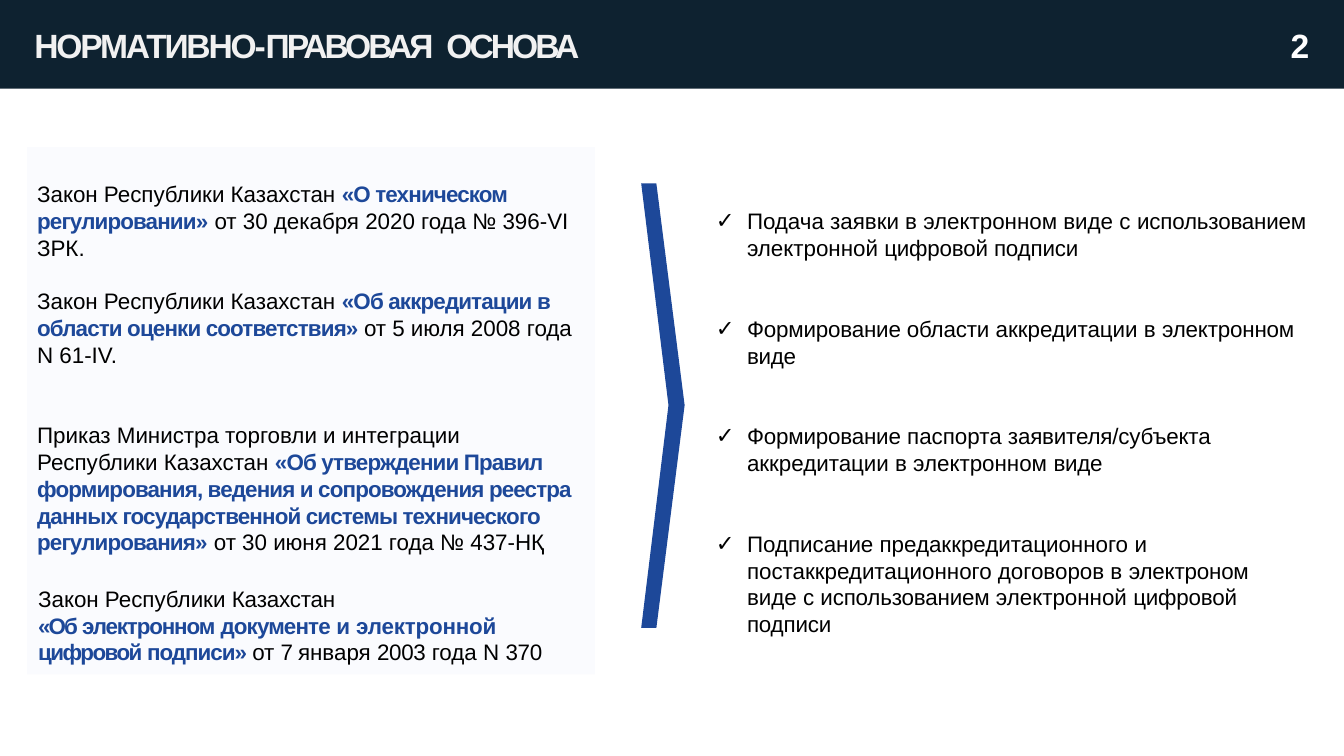
from lxml import etree
from pptx import Presentation
from pptx.dml.color import RGBColor
from pptx.enum.shapes import MSO_SHAPE
from pptx.enum.text import MSO_ANCHOR, MSO_AUTO_SIZE, PP_ALIGN
from pptx.oxml.ns import qn
from pptx.util import Inches, Pt

RECTANGLE = MSO_SHAPE.RECTANGLE
TOP, MIDDLE = MSO_ANCHOR.TOP, MSO_ANCHOR.MIDDLE
FIT_SHAPE = MSO_AUTO_SIZE.SHAPE_TO_FIT_TEXT
LEFT = PP_ALIGN.LEFT

NAVY, BLUE, PALE = "0E2230", "1D4899", "FAFBFE"
BLACK, WHITE, OFF_WHITE = "000000", "FFFFFF", "F1F1F1"
LINE = 19.15  # line pitch of the 16 pt text, in points


def rgb(value):
    return RGBColor.from_string(value)


def law(text, spacing=-0.6):
    """A run that names a law: bold and blue."""
    return text, spacing, BLUE


def para(*runs, **layout):
    return {"runs": runs, **layout}


def write(frame, paragraphs, size=16, color=BLACK, bold=False, line=LINE,
          anchor=TOP, insets=(0, 0.01, 0, 0)):
    """Fill a frame; a run is (text, letter spacing[, accent colour])."""
    frame.word_wrap = True
    frame.auto_size = FIT_SHAPE
    frame.vertical_anchor = anchor
    (frame.margin_left, frame.margin_top,
     frame.margin_right, frame.margin_bottom) = map(Inches, insets)
    for index, item in enumerate(paragraphs):
        p = frame.paragraphs[0] if index == 0 else frame.add_paragraph()
        p.alignment = LEFT
        p.line_spacing = Pt(line) if line else 1.0
        p.space_before = Pt(item.get("before", 0))
        props = p._p.get_or_add_pPr()
        props.set("marL", str(Inches(item.get("margin", 0))))
        props.set("indent", str(Inches(item.get("hang", 0))))
        if "bullet" in item:
            etree.SubElement(props, qn("a:buFont")).set("typeface", "Arial")
            etree.SubElement(props, qn("a:buChar")).set("char", item["bullet"])
            tabs = etree.SubElement(props, qn("a:tabLst"))
            tab = etree.SubElement(tabs, qn("a:tab"))
            tab.set("pos", str(Inches(item["margin"])))
            tab.set("algn", "l")
        for text, spacing, *accent in item["runs"]:
            run = p.add_run()
            run.text = text
            run.font.name = "Arial"
            run.font.size = Pt(size)
            run.font.bold = bold or bool(accent)
            run.font.color.rgb = rgb(accent[0] if accent else color)
            run._r.get_or_add_rPr().set("spc", str(round(spacing * 100)))


class Deck:
    """Places elements in percent of the slide's width and height."""

    def __init__(self, width, height):
        self.prs = Presentation()
        self.prs.slide_width, self.prs.slide_height = Inches(width), Inches(height)
        self.column, self.row = Inches(width) / 100, Inches(height) / 100
        self.slide = self.prs.slides.add_slide(self.prs.slide_layouts[6])

    def place(self, x, y):
        return round(x * self.column), round(y * self.row)

    def paint(self, shape, fill):
        shape.shadow.inherit = False
        shape.fill.solid()
        shape.fill.fore_color.rgb = rgb(fill)
        shape.line.fill.background()
        return shape

    def panel(self, x, y, width, height, fill):
        shape = self.slide.shapes.add_shape(
            RECTANGLE, *self.place(x, y), *self.place(width, height))
        return self.paint(shape, fill)

    def outline(self, points, fill):
        start, *rest = [self.place(*point) for point in points]
        builder = self.slide.shapes.build_freeform(*start)
        builder.add_line_segments(rest, close=True)
        return self.paint(builder.convert_to_shape(), fill)

    def text(self, x, y, width, height, paragraphs, **style):
        box = self.slide.shapes.add_textbox(
            *self.place(x, y), *self.place(width, height))
        write(box.text_frame, paragraphs, **style)


LAWS = [
    para(("Закон Республики Казахстан ", 0),
         law("«О техническом регулировании»"),
         (" от 30 декабря 2020 года № 396-VI ЗРК.", 0)),
    para(("Закон Республики Казахстан ", 0),
         law("«Об аккредитации в области оценки соответствия» "),
         ("от 5 июля 2008 года N 61-IV.", 0), before=LINE),
    para(("Приказ Министра торговли и интеграции Республики Казахстан ", 0),
         law("«Об утверждении Правил формирования, ведения и сопровождения "
             "реестра данных государственной системы технического "
             "регулирования»"),
         (" от 30 июня 2021 года № 437-НҚ", 0), before=2 * LINE),
    para(("Закон Республики ", 0), ("Казахстан", -0.1),
         margin=0.01, before=21.2),
    para(law("«Об ", -1.4), law("электронном ", -0.8), law("документе ", -0.6),
         law("и ", 0), law("электронной", -0.1), margin=0.01),
    para(law("цифровой ", -1.1), law("подписи» ", -0.7), ("от ", 0),
         ("7 ", -0.9), ("января ", 0), ("2003 ", -0.2), ("года N ", 0),
         ("370", -0.2), margin=0.01),
]

CHECK = {"bullet": "✓", "margin": 0.33, "hang": -0.31}
# Width, height and paragraphs of each service
SERVICES = [
    (44.71, 7.47, [para(
        ("Подача заявки в электронном виде с ", 0), ("использованием ", -0.1),
        ("электронной ", 0), ("цифровой подписи", -0.1), **CHECK)]),
    (44.19, 7.47, [para(
        ("Формирование области ", -0.1), ("аккредитации в ", 0),
        ("электронном ", -0.1), ("виде", -0.2), **CHECK)]),
    (37.81, 7.47, [para(
        ("Формирование ", -0.1), ("паспорта ", 0),
        ("заявителя/субъекта ", -0.1), ("аккредитации в электронном ", 0),
        ("виде", -0.2), **CHECK)]),
    (41.04, 14.53, [
        para(("Подписание предаккредитационного ", 0), ("и", -0.5), **CHECK),
        para(("постаккредитационного договоров в ", 0), ("электроном ", -0.1),
             ("виде с ", 0), ("использованием ", -0.1), ("электронной ", 0),
             ("цифровой подписи", -0.1), margin=0.33)]),
]


def main():
    deck = Deck(13.33, 7.5)

    # Header band with title and slide number
    heading = {"size": 24, "bold": True, "line": None,
               "insets": (0, 0.02, 0, 0)}
    deck.panel(0, -0.13, 100, 11.87, NAVY)
    deck.text(95.95, 3.07, 1.5, 5.73, [para(("2", -0.5), margin=0.01)],
              color=WHITE, **heading)
    deck.text(2.48, 3.07, 69.54, 5.73,
              [para(("НОРМАТИВНО-", -1.6), ("ПРАВОВАЯ", -2.1), (" ", 2.5),
                    ("ОСНОВА", -2.1), margin=0.01)],
              color=OFF_WHITE, **heading)

    # Chevron between the laws and the services
    top, middle, bottom = 24.27, 53.6, 83.07
    deck.outline([(48.84, top), (47.71, top), (49.74, middle),
                  (47.71, bottom), (48.84, bottom), (50.94, middle)], BLUE)

    # Services on the right, at equal steps
    for index, (width, height, paragraphs) in enumerate(SERVICES):
        deck.text(53.11, 27.2 + 14.22 * index, width, height, paragraphs,
                  insets=(0, 0.02, 0, 0))

    # Laws on the left
    laws = deck.panel(2.03, 19.47, 42.24, 69.73, PALE)
    write(laws.text_frame, LAWS, anchor=MIDDLE, insets=(0.1, 0.29, 0.1, 0.05))

    deck.prs.save("out.pptx")


if __name__ == "__main__":
    main()
